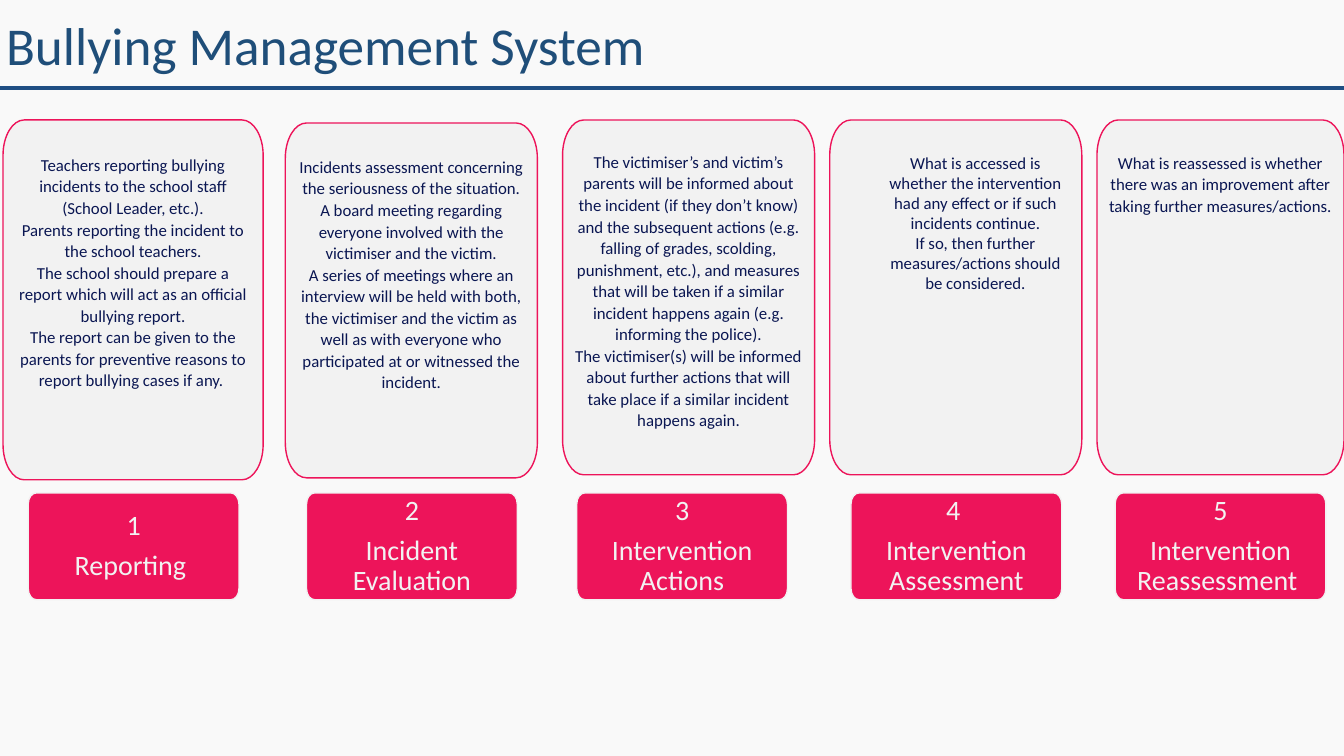
"""Build the Bullying Management System slide: five stages, each a text card above a label."""
import pptx
import pptx.dml.color
import pptx.enum.text
import pptx.oxml
import pptx.oxml.ns
import pptx.util

Inches, Pt = pptx.util.Inches, pptx.util.Pt
RGBColor = pptx.dml.color.RGBColor
ALIGN, ANCHOR = pptx.enum.text.PP_ALIGN, pptx.enum.text.MSO_ANCHOR
qn, NS = pptx.oxml.ns.qn, pptx.oxml.ns.nsdecls("a")

TITLE = "Bullying Management System"
STAGES = [
    dict(label=["1", "Reporting "], label_left=0.28, card=(0.03, 1.19, 2.58, 3.57), top=0.33, text=[
        "Teachers reporting bullying incidents to the school staff (School Leader, etc.).",
        "Parents reporting the incident to the school teachers.",
        "The school should prepare a report which will act as an official bullying report.",
        "The report can be given to the parents for preventive reasons to report bullying cases if any. "]),
    dict(label=["2", "Incident Evaluation"], label_left=3.04, card=(2.83, 1.22, 2.5, 3.52), top=0.32, text=[
        "Incidents assessment concerning the seriousness of the situation. A board meeting "
        "regarding everyone involved with the victimiser and the victim.",
        "A series of meetings where an interview will be held with both, the victimiser and the "
        "victim as well as with everyone who participated at or witnessed the incident."]),
    dict(label=["3", "Intervention Actions"], label_left=5.72, card=(5.58, 1.19, 2.5, 3.52), top=0.3, text=[
        "The victimiser’s and victim’s parents will be informed about the incident (if they don’t "
        "know) and the subsequent actions (e.g. falling of grades, scolding, punishment, etc.), and "
        "measures that will be taken if a similar incident happens again (e.g. informing the police).",
        "The victimiser(s) will be informed about further actions that will take place if a similar "
        "incident happens again."]),
    dict(label=["4 ", "Intervention Assessment"], label_left=8.44, card=(8.23, 1.19, 2.5, 3.52), top=0.32,
         left=0.5, spacing=1.0, text=[
        "What is accessed is whether the intervention had any effect or if such incidents continue.",
        "If so, then further measures/actions should be considered."]),
    dict(label=["5", "Intervention Reassessment "], label_left=11.06, card=(10.88, 1.19, 2.45, 3.52), top=0.31, text=[
        "What is reassessed is whether there was an improvement after taking further measures/actions. "]),
]

FONT = "Calibri"
PAGE = RGBColor(0xF9, 0xF9, 0xF9)
RULE = RGBColor(0x1F, 0x4E, 0x83)
HEADING = RGBColor(0x1F, 0x4E, 0x79)
PINK = RGBColor(0xED, 0x14, 0x5A)
PALE = RGBColor(0xF2, 0xF2, 0xF2)
NAVY = RGBColor(0x0A, 0x16, 0x52)
WIDTH, HEIGHT, HEADER = 13.33, 7.5, 0.87
LABEL_TOP, LABEL_WIDTH, LABEL_HEIGHT = 4.89, 2.09, 1.06
CURVE = 0.55


def write(sp, lines, size, color, insets, anchor=ANCHOR.TOP, align=ALIGN.CENTER, spacing=1.0, after=0):
    tf = sp.text_frame
    tf.word_wrap = True
    tf.auto_size = pptx.enum.text.MSO_AUTO_SIZE.NONE
    tf.vertical_anchor = anchor
    tf.margin_left, tf.margin_top, tf.margin_right, tf.margin_bottom = map(Inches, insets)
    for i, line in enumerate(lines):
        p = tf.add_paragraph() if i else tf.paragraphs[0]
        p.alignment, p.line_spacing = align, spacing
        p.space_before, p.space_after = Pt(0), Pt(after)
        r = p.add_run()
        r.text = line
        r.font.name, r.font.size, r.font.color.rgb = FONT, Pt(size), color


def round_corners(sp, points):
    """Turn every other segment of the outline into a quarter-ellipse curve."""
    segments = list(sp._element.iter(qn("a:lnTo")))
    for i in range(0, len(segments), 2):
        (x0, y0), (x1, y1) = points[i:i + 2]
        cx, cy = (x0, y1) if i % 4 == 0 else (x1, y0)
        stops = [(x0 + CURVE * (cx - x0), y0 + CURVE * (cy - y0)),
                 (x1 + CURVE * (cx - x1), y1 + CURVE * (cy - y1)), (x1, y1)]
        pts = "".join(f'<a:pt x="{round(x - sp.left)}" y="{round(y - sp.top)}"/>' for x, y in stops)
        curve = pptx.oxml.parse_xml(f"<a:cubicBezTo {NS}>{pts}</a:cubicBezTo>")
        segments[i].getparent().replace(segments[i], curve)


def rounded_box(slide, box, rx, ry, fill, line):
    x, y, w, h = box
    right, bottom = x + w, y + h
    outline = [(x, y + ry), (x + rx, y), (right - rx, y), (right, y + ry),
               (right, bottom - ry), (right - rx, bottom), (x + rx, bottom), (x, bottom - ry)]
    points = [(Inches(px), Inches(py)) for px, py in outline]
    builder = slide.shapes.build_freeform(*points[0])
    builder.add_line_segments(points[1:], close=True)
    sp = builder.convert_to_shape()
    round_corners(sp, points)
    sp.shadow.inherit = False
    sp.fill.solid()
    sp.fill.fore_color.rgb = fill
    sp.line.color.rgb = line
    sp.line.width = Pt(1)
    return sp


def set_opacity(sp, percent):
    color = sp._element.spPr.find(qn("a:solidFill")).find(qn("a:srgbClr"))
    color.append(pptx.oxml.parse_xml(f'<a:alpha {NS} val="{percent * 1000}"/>'))


def main():
    prs = pptx.Presentation()
    prs.slide_width, prs.slide_height = Inches(WIDTH), Inches(HEIGHT)
    slide = prs.slides.add_slide(prs.slide_layouts[5])
    slide.background.fill.solid()
    slide.background.fill.fore_color.rgb = PAGE

    title = slide.shapes.title
    title.left, title.top, title.width, title.height = map(Inches, (0, 0.04, WIDTH, HEADER))
    write(title, [TITLE], 38, HEADING, [0.06] * 4, ANCHOR.MIDDLE, ALIGN.LEFT, 0.9)

    rule = slide.shapes.add_connector(1, 0, Inches(HEADER), Inches(WIDTH), Inches(HEADER))
    rule.line.color.rgb = RULE
    rule.line.width = Pt(3)
    rule._element.spPr.append(pptx.oxml.parse_xml(f"<a:effectLst {NS}/>"))

    for stage in STAGES:
        card = rounded_box(slide, stage["card"], 0.21, 0.35, PALE, PINK)
        set_opacity(card, 90)
        write(card, stage["text"], 12, NAVY, (stage.get("left", 0.11), stage["top"], 0.11, 0.48),
              spacing=stage.get("spacing", 1.07))
        box = (stage["label_left"], LABEL_TOP, LABEL_WIDTH, LABEL_HEIGHT)
        label = rounded_box(slide, box, 0.08, 0.11, PINK, PALE)
        write(label, stage["label"], 20, PALE, (0.1, 0.08, 0.1, 0.08), ANCHOR.MIDDLE, spacing=0.9, after=7)

    prs.save("out.pptx")


if __name__ == "__main__":
    main()
